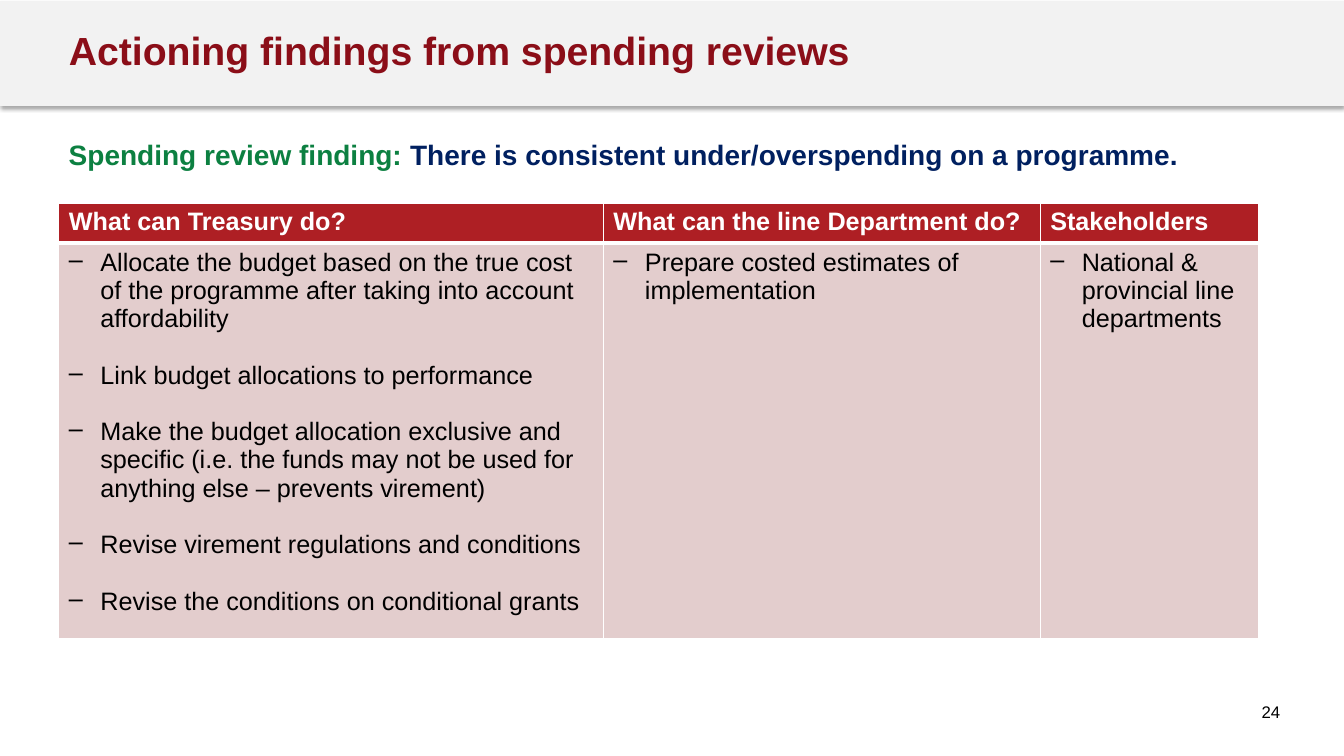
from lxml import etree
from pptx import Presentation
from pptx.dml.color import RGBColor
from pptx.enum import shapes, text
from pptx.oxml import parse_xml
from pptx.oxml.ns import nsdecls, qn
from pptx.util import Pt


def colour(value):
    return RGBColor.from_string(value)


def style(font, size, value, bold=False):
    font.name, font.size, font.bold = "Arial", Pt(size), bold
    font.color.rgb = colour(value)


deck = Presentation()
deck.slide_width, deck.slide_height = Pt(960), Pt(540)
page = deck.slides.add_slide(deck.slide_layouts[5])

# Header band, sent behind the title
band = page.shapes.add_shape(
    shapes.MSO_SHAPE.RECTANGLE, Pt(0), Pt(0.72), Pt(960), Pt(75)
)
band.fill.solid()
band.fill.fore_color.rgb = colour("F2F2F2")
band.line.fill.background()
band.shadow.inherit = False
effects = band._element.spPr.find(qn("a:effectLst"))
effects.append(parse_xml(
    f'<a:outerShdw {nsdecls("a")} blurRad="{Pt(3.1)}" dist="{Pt(1.8)}" '
    'dir="5400000" algn="t" rotWithShape="0">'
    '<a:srgbClr val="000000"><a:alpha val="35000"/></a:srgbClr></a:outerShdw>'
))
page.shapes._spTree.insert(2, band._element)

# Title
title = page.shapes.title
title.left, title.top, title.width, title.height = Pt(42), Pt(19.5), Pt(595), Pt(32.5)
frame = title.text_frame
frame.text = "Actioning findings from spending reviews"
frame.auto_size = text.MSO_AUTO_SIZE.NONE
frame.vertical_anchor = text.MSO_ANCHOR.MIDDLE
para = frame.paragraphs[0]
para.alignment = text.PP_ALIGN.LEFT
style(para.font, 28, "8B0E18", True)

# Finding
finding = page.shapes.add_textbox(Pt(42), Pt(94.5), Pt(829), Pt(42))
finding.text_frame.word_wrap = True
para = finding.text_frame.paragraphs[0]
for words, value in [
    ("Spending review finding: ", "0C8041"),
    ("There is consistent under/overspending on a programme.", "002060"),
]:
    span = para.add_run()
    span.text = words
    style(span.font, 20, value, True)

# Table of actions
columns = [
    ("What can Treasury do?", 389, [
        "Allocate the budget based on the true cost of the programme after "
        "taking into account affordability",
        "Link budget allocations to performance",
        "Make the budget allocation exclusive and specific (i.e. the funds may "
        "not be used for anything else – prevents virement)",
        "Revise virement regulations and conditions",
        "Revise the conditions on conditional grants",
    ]),
    ("What can the line Department do?", 312, [
        "Prepare costed estimates of implementation",
    ]),
    ("Stakeholders", 156, ["National & provincial line departments"]),
]
table = page.shapes.add_table(
    2, len(columns), Pt(42), Pt(145), Pt(857), Pt(296)
).table
table.rows[0].height, table.rows[1].height = Pt(27), Pt(269)

for index, (heading, width, actions) in enumerate(columns):
    table.columns[index].width = Pt(width)
    header, body = table.cell(0, index), table.cell(1, index)
    header.text = heading
    style(header.text_frame.paragraphs[0].font, 18, "FFFFFF", True)

    body.text = "\n".join(actions)
    for number, para in enumerate(body.text_frame.paragraphs):
        style(para.font, 18, "000000")
        if number:
            para.space_before = Pt(20.2)
        props = para._p.get_or_add_pPr()
        props.set("marL", str(Pt(22.5)))
        props.set("indent", str(Pt(-22.5)))
        bullet = parse_xml(f'<a:buChar {nsdecls("a")} char="–"/>')
        props.insert_element_before(bullet, "a:tabLst", "a:defRPr", "a:extLst")

    # White borders, thick between the rows
    for cell, fill, top, bottom in [
        (header, "AE1F24", 1, 3), (body, "E3CDCD", 3, 1)
    ]:
        props = cell._tc.get_or_add_tcPr()
        for side, weight in [("lnL", 1), ("lnR", 1), ("lnT", top), ("lnB", bottom)]:
            border = etree.SubElement(props, qn(f"a:{side}"), w=str(Pt(weight)))
            paint = etree.SubElement(border, qn("a:solidFill"))
            etree.SubElement(paint, qn("a:srgbClr"), val="FFFFFF")
        cell.fill.solid()
        cell.fill.fore_color.rgb = colour(fill)

# Page number
folio = page.shapes.add_textbox(Pt(867), Pt(497.5), Pt(54.5), Pt(28))
folio.text_frame.word_wrap = True
para = folio.text_frame.paragraphs[0]
para.text = "24"
para.alignment = text.PP_ALIGN.RIGHT
style(para.font, 12, "000000")

deck.save("out.pptx")
